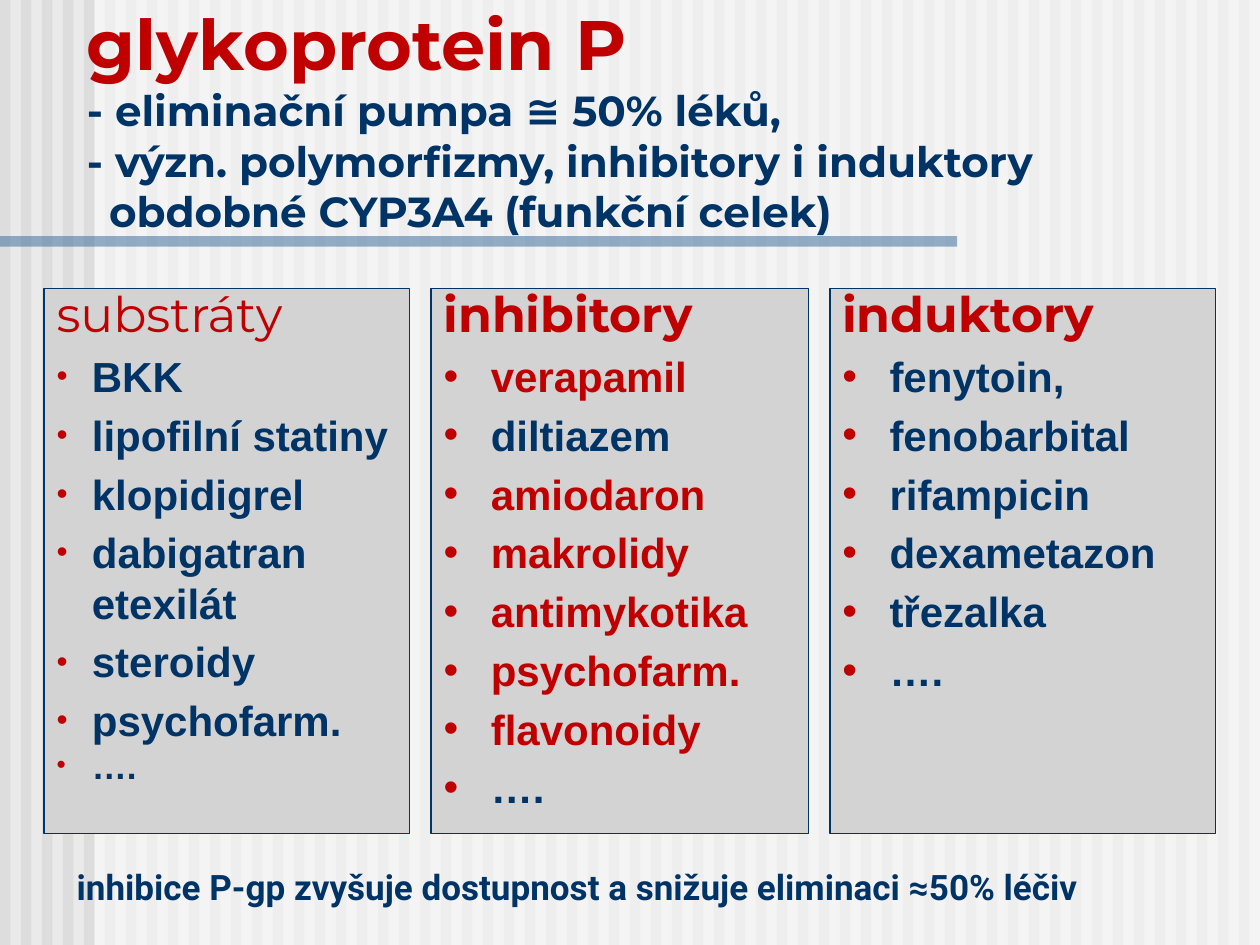
from lxml import etree
from pptx import Presentation
from pptx.dml.color import RGBColor
from pptx.enum import shapes, text
from pptx.oxml import ns
from pptx.util import Pt

COLORS = {
    "background": "EAEAEA", "stripe": "DDDDDD", "veil": "FFFFFF",
    "rule": "336699", "panel": "D3D3D3", "navy": "003366", "red": "C00000",
}
WIDTH, HEIGHT = 720, 540


def rgb(name):
    return RGBColor.from_string(COLORS[name])


def add_xml(parent, tag, **attributes):
    return etree.SubElement(parent, ns.qn(tag), attributes)


def write(paragraph, content, font="Montserrat", size=24, color="navy", bold=True,
          before=0, line=None, indent=0):
    """Fill a paragraph with one formatted run."""
    run = paragraph.add_run()
    run.text = content
    run.font.name, run.font.size, run.font.bold = font, Pt(size), bold
    run.font.color.rgb = rgb(color)
    paragraph.alignment = text.PP_ALIGN.LEFT
    paragraph.space_before = Pt(before)
    if line:
        paragraph.line_spacing = line
    if indent:
        paragraph._p.get_or_add_pPr().set("marL", str(Pt(indent)))


def add_bullet(paragraph, indent, scale):
    properties = paragraph._p.get_or_add_pPr()
    properties.set("marL", str(Pt(indent)))
    properties.set("indent", str(-Pt(indent)))
    add_xml(add_xml(properties, "a:buClr"), "a:srgbClr", val=COLORS["red"])
    add_xml(properties, "a:buSzPct", val=str(scale * 1000))
    add_xml(properties, "a:buFont", typeface="Arial")
    add_xml(properties, "a:buChar", char="•")


class SlideBuilder:
    """Holds the current slide and the style of its elements."""

    border = 0.75
    panel_top, panel_height = 165, 311.5

    def __init__(self, presentation):
        self.slide = presentation.slides.add_slide(presentation.slide_layouts[5])
        fill = self.slide.background.fill
        fill.solid()
        fill.fore_color.rgb = rgb("background")

    def rectangle(self, left, top, width, height, color, alpha=None, line=None):
        shape = self.slide.shapes.add_shape(
            shapes.MSO_SHAPE.RECTANGLE, Pt(left), Pt(top), Pt(width), Pt(height))
        shape.shadow.inherit = False
        shape.fill.solid()
        shape.fill.fore_color.rgb = rgb(color)
        if alpha:
            color_element = shape._element.spPr.find(".//" + ns.qn("a:srgbClr"))
            add_xml(color_element, "a:alpha", val=str(alpha * 1000))
        if line:
            shape.line.color.rgb = rgb(line)
            shape.line.width = Pt(self.border)
        else:
            shape.line.fill.background()
        return shape

    def title(self, left, top, width, height, heading, lines):
        title = self.slide.shapes.title
        title.left, title.top = Pt(left), Pt(top)
        title.width, title.height = Pt(width), Pt(height)
        frame = title.text_frame
        frame.word_wrap = True
        frame.auto_size = text.MSO_AUTO_SIZE.NONE
        frame.vertical_anchor = text.MSO_ANCHOR.MIDDLE
        frame.margin_bottom = Pt(33)
        write(frame.paragraphs[0], heading, size=40, color="red")
        for content, indent in lines:
            write(frame.add_paragraph(), content, indent=indent)
        # Bring the title in front of the background
        self.slide.shapes._spTree.append(title._element)

    def panel(self, left, width, heading, items, bold=True, indent=27, scale=100,
              red_items=(), last_size=24, last_line=None):
        shape = self.rectangle(left, self.panel_top, width, self.panel_height,
                               "panel", line="navy")
        frame = shape.text_frame
        frame.word_wrap = True
        frame.vertical_anchor = text.MSO_ANCHOR.TOP
        write(frame.paragraphs[0], heading, size=28, color="red", bold=bold,
              before=5.6, line=0.8)
        for item in items:
            paragraph = frame.add_paragraph()
            is_last = item == items[-1]
            size = last_size if is_last else 24
            write(paragraph, item, font="Arial", size=size, before=size * 0.2,
                  color="red" if item in red_items else "navy",
                  line=last_line if is_last else None)
            add_bullet(paragraph, indent, scale)

    def note(self, left, top, width, height, content):
        box = self.slide.shapes.add_textbox(Pt(left), Pt(top), Pt(width), Pt(height))
        box.text_frame.word_wrap = False
        write(box.text_frame.paragraphs[0], content, font="Roboto", size=20)


def main():
    presentation = Presentation()
    presentation.slide_width, presentation.slide_height = Pt(WIDTH), Pt(HEIGHT)
    builder = SlideBuilder(presentation)

    # Striped background, veil and rule
    for left in range(0, WIDTH, 12):
        builder.rectangle(left, 0, 6, HEIGHT, "stripe")
    builder.rectangle(54, 0, WIDTH - 54, HEIGHT, "veil", alpha=50)
    builder.rectangle(0, 135, 547, 6, "rule", alpha=50)

    # Three panels
    builder.panel(25.2, 209, "substráty",
                  ["BKK", "lipofilní statiny", "klopidigrel", "dabigatran etexilát",
                   "steroidy", "psychofarm.", "…."],
                  bold=False, indent=20.2, scale=75, last_size=20, last_line=0.8)
    builder.panel(246.4, 215.5, "inhibitory",
                  ["verapamil", "diltiazem", "amiodaron", "makrolidy", "antimykotika",
                   "psychofarm.", "flavonoidy", "…."],
                  red_items=("verapamil", "amiodaron", "makrolidy", "antimykotika",
                             "psychofarm.", "flavonoidy"))
    builder.panel(474.2, 220.5, "induktory",
                  ["fenytoin,", "fenobarbital", "rifampicin", "dexametazon",
                   "třezalka", "…."])

    # Title and closing note
    builder.title(42.5, 37.4, 658, 90, "glykoprotein P",
                  [("- eliminační pumpa ≅ 50% léků,", 0),
                   ("- význ. polymorfizmy, inhibitory i induktory", 0),
                   ("obdobné CYP3A4 (funkční celek)", 12.6)])
    builder.note(36.7, 491, 625.7, 31.7,
                 "inhibice P-gp zvyšuje dostupnost a snižuje eliminaci ≈50% léčiv")

    presentation.save("out.pptx")


if __name__ == "__main__":
    main()
